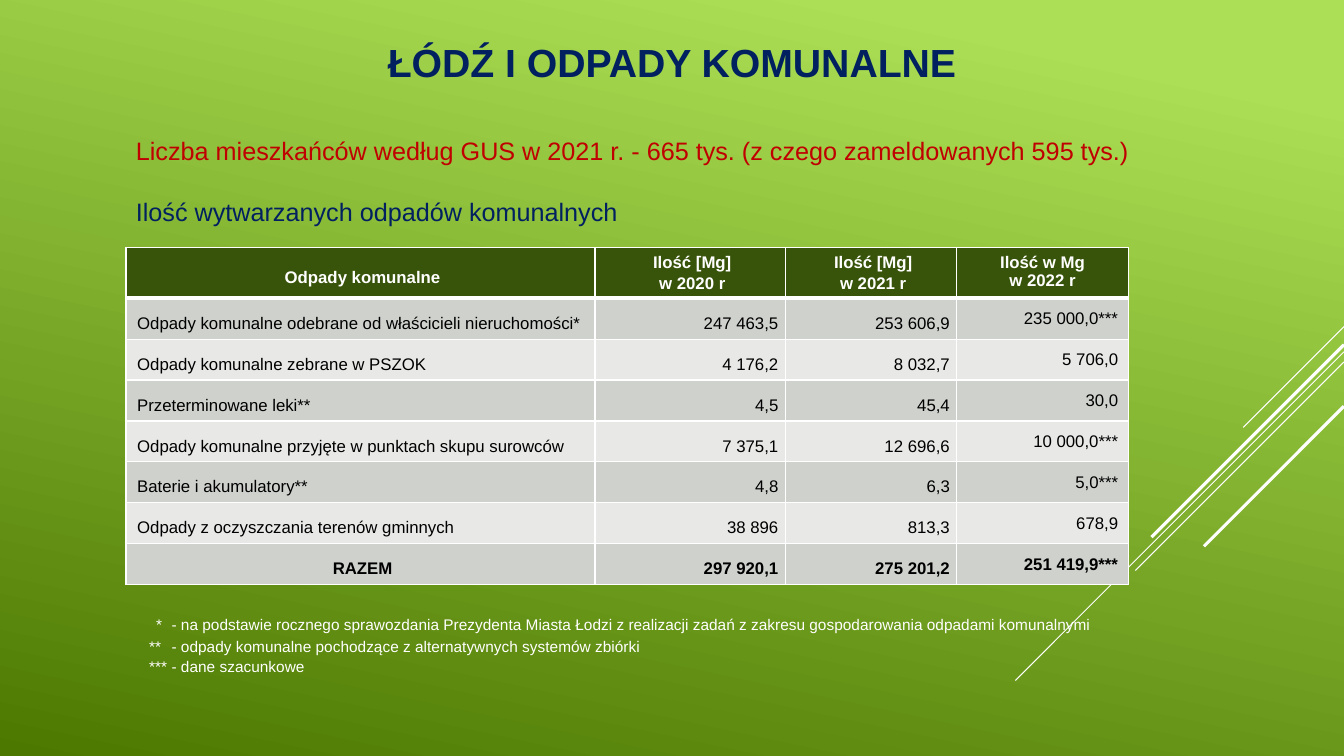
import lxml.etree
import pptx
import pptx.dml.color
import pptx.enum.shapes
import pptx.enum.text
import pptx.oxml.ns
import pptx.util

Pt = pptx.util.Pt
RGBColor = pptx.dml.color.RGBColor
ALIGN = pptx.enum.text.PP_ALIGN
ANCHOR = pptx.enum.text.MSO_ANCHOR
qn = pptx.oxml.ns.qn

WHITE = RGBColor(0xFF, 0xFF, 0xFF)
BLACK = RGBColor(0x00, 0x00, 0x00)
NAVY = RGBColor(0x00, 0x20, 0x60)
RED = RGBColor(0xC0, 0x00, 0x00)
LIME = RGBColor(0xAC, 0xDF, 0x55)
FOREST = RGBColor(0x4C, 0x78, 0x00)
HEADER_GREEN = RGBColor(0x38, 0x54, 0x0A)
BANDS = RGBColor(0xCE, 0xD1, 0xCC), RGBColor(0xE8, 0xE9, 0xE7)

SLIDE_WIDTH, SLIDE_HEIGHT = 960, 540

# Start height on the right edge, horizontal run, line width
DIAGONALS = [
    (233.3, 72, 0.75),
    (251.3, 234.7, 0.75),
    (258.5, 149, 0.75),
    (246.2, 137.5, 2.25),
    (290.2, 100, 2.25),
]

COLUMN_WIDTHS = [335, 136, 122.5, 122.5]
HEADER_HEIGHT, ROW_HEIGHT = 34.5, 29.25
WASTE_ROWS = [
    ["Odpady komunalne", "Ilość [Mg]\nw 2020 r", "Ilość [Mg]\nw 2021 r", "Ilość w Mg\nw 2022 r"],
    ["Odpady komunalne odebrane od właścicieli nieruchomości*", "247 463,5", "253 606,9", "235 000,0***"],
    ["Odpady komunalne zebrane w PSZOK", "4 176,2", "8 032,7", "5 706,0"],
    ["Przeterminowane leki**", "4,5", "45,4", "30,0"],
    ["Odpady komunalne przyjęte w punktach skupu surowców", "7 375,1", "12 696,6", "10 000,0***"],
    ["Baterie i akumulatory**", "4,8", "6,3", "5,0***"],
    ["Odpady z oczyszczania terenów gminnych", "38 896", "813,3", "678,9"],
    ["RAZEM", "297 920,1", "275 201,2", "251 419,9***"],
]

FOOTNOTES = [
    "*\t- na podstawie rocznego sprawozdania Prezydenta Miasta Łodzi z realizacji zadań "
    "z zakresu gospodarowania odpadami komunalnymi",
    "**\t- odpady komunalne pochodzące z alternatywnych systemów zbiórki",
    "***\t- dane szacunkowe",
]


def set_values(target, values):
    for name, value in values.items():
        setattr(target, name, value)


class SlideBuilder:
    font_name = "Arial"

    def __init__(self, slide):
        self.slide = slide

    def background(self, start, end, angle):
        fill = self.slide.background.fill
        fill.gradient()
        fill.gradient_angle = angle
        for stop, (position, color) in zip(fill.gradient_stops, (start, end)):
            stop.position = position
            stop.color.rgb = color

    def line(self, start, end, width):
        connector = self.slide.shapes.add_connector(
            pptx.enum.shapes.MSO_CONNECTOR.STRAIGHT, *map(Pt, start + end))
        connector.line.color.rgb = WHITE
        connector.line.width = Pt(width)
        lxml.etree.SubElement(connector._element.spPr, qn("a:effectLst"))

    def run(self, paragraph, text, size, color, bold=False):
        run = paragraph.add_run()
        run.text = text
        set_values(run.font, {"name": self.font_name, "size": Pt(size), "bold": bold})
        run.font.color.rgb = color

    def indent(self, paragraph, left, first=0):
        properties = paragraph._p.get_or_add_pPr()
        properties.set("marL", str(Pt(left)))
        properties.set("indent", str(Pt(first)))

    def text_box(self, box, anchor=ANCHOR.TOP):
        frame = self.slide.shapes.add_textbox(*map(Pt, box)).text_frame
        set_values(frame, {"word_wrap": True, "vertical_anchor": anchor})
        return frame

    def paragraph(self, frame, **values):
        """Return the empty first paragraph, or a new one after it."""
        first = frame.paragraphs[0]
        paragraph = frame.add_paragraph() if first.runs else first
        set_values(paragraph, values)
        return paragraph

    def borders(self, cell, bottom_width):
        properties = cell._tc.get_or_add_tcPr()
        for side, width in (("L", 1), ("R", 1), ("T", 1), ("B", bottom_width)):
            border = lxml.etree.SubElement(properties, qn("a:ln" + side), w=str(Pt(width)))
            fill = lxml.etree.SubElement(border, qn("a:solidFill"))
            lxml.etree.SubElement(fill, qn("a:srgbClr"), val=str(WHITE))

    def cell(self, cell, text, row, column):
        header, total = row == 0, row == len(WASTE_ROWS) - 1
        last = column == len(COLUMN_WIDTHS) - 1
        self.borders(cell, 3 if header else 1)
        cell.fill.solid()
        cell.fill.fore_color.rgb = HEADER_GREEN if header else BANDS[(row - 1) % 2]
        cell.vertical_anchor = ANCHOR.TOP if header and last else ANCHOR.MIDDLE
        if not last:
            set_values(cell, {"margin_left": Pt(5), "margin_right": Pt(5),
                              "margin_top": 0, "margin_bottom": 0})
        if header or (total and column == 0):
            alignment = ALIGN.CENTER
        else:
            alignment = ALIGN.RIGHT if column else ALIGN.LEFT
        for line in text.split("\n"):
            paragraph = self.paragraph(cell.text_frame, alignment=alignment)
            if not last:
                paragraph.space_before = Pt(4 if header and column == 0 else 2)
                paragraph.line_spacing = 1.0 if header and column else 1.5
                self.indent(paragraph, 3)
            self.run(paragraph, line, 12, WHITE if header else BLACK, header or total)

    def table(self, left, top):
        heights = [HEADER_HEIGHT] + [ROW_HEIGHT] * (len(WASTE_ROWS) - 1)
        box = left, top, sum(COLUMN_WIDTHS), sum(heights)
        table = self.slide.shapes.add_table(
            len(heights), len(COLUMN_WIDTHS), *map(Pt, box)).table
        for column, width in zip(table.columns, COLUMN_WIDTHS):
            column.width = Pt(width)
        for row, height in zip(table.rows, heights):
            row.height = Pt(height)
        for row, texts in enumerate(WASTE_ROWS):
            for column, text in enumerate(texts):
                self.cell(table.cell(row, column), text, row, column)


def main():
    presentation = pptx.Presentation()
    set_values(presentation, {"slide_width": Pt(SLIDE_WIDTH), "slide_height": Pt(SLIDE_HEIGHT)})
    builder = SlideBuilder(presentation.slides.add_slide(presentation.slide_layouts[6]))

    builder.background((0.1, LIME), (1.0, FOREST), 258)
    for top, length, width in DIAGONALS:
        builder.line((SLIDE_WIDTH, top), (SLIDE_WIDTH - length, top + length), width)

    title = builder.text_box((66, 23, 828, 42), ANCHOR.MIDDLE)
    builder.run(builder.paragraph(title, alignment=ALIGN.CENTER),
                "ŁÓDŹ I ODPADY KOMUNALNE", 28, NAVY, True)

    builder.table(90, 177)

    intro = builder.text_box((90, 93, 731, 73))
    builder.run(builder.paragraph(intro, alignment=ALIGN.JUSTIFY),
                "Liczba mieszkańców według GUS w 2021 r. - 665 tys. (z czego zameldowanych 595 tys.)",
                18, RED)
    builder.run(builder.paragraph(intro, alignment=ALIGN.JUSTIFY, space_before=Pt(22)),
                "Ilość wytwarzanych odpadów komunalnych", 18, NAVY)

    notes = builder.text_box((99.5, 429, 707, 55.5))
    for number, text in enumerate(FOOTNOTES):
        paragraph = builder.paragraph(notes, alignment=ALIGN.JUSTIFY, space_before=Pt(1 if number else 0))
        builder.indent(paragraph, 16, -16)
        if number == 0:
            builder.run(paragraph, " ", 18, WHITE)
        builder.run(paragraph, text, 11, WHITE)

    presentation.save("out.pptx")


if __name__ == "__main__":
    main()
